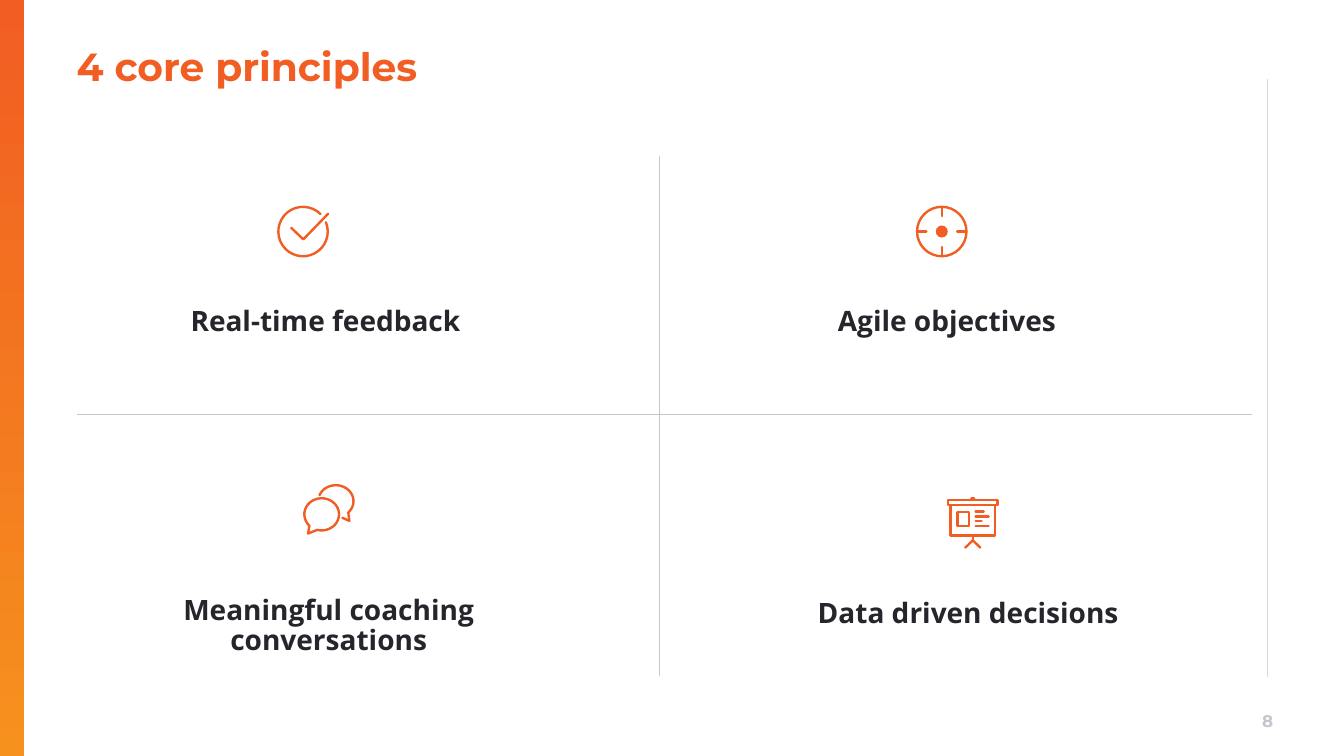
from math import cos, radians, sin

from lxml import etree
from pptx import Presentation
from pptx.dml.color import RGBColor
from pptx.enum.shapes import MSO_CONNECTOR, MSO_SHAPE
from pptx.enum.text import MSO_ANCHOR, PP_ALIGN
from pptx.oxml.ns import qn
from pptx.util import Pt

STRAIGHT = MSO_CONNECTOR.STRAIGHT
RECT, OVAL = MSO_SHAPE.RECTANGLE, MSO_SHAPE.OVAL
LEFT, CENTER = PP_ALIGN.LEFT, PP_ALIGN.CENTER
TOP, MIDDLE = MSO_ANCHOR.TOP, MSO_ANCHOR.MIDDLE

ORANGE, AMBER, INK, GREY, PALE = "F15D22", "F6911E", "25252C", "C5C5CE", "D9D9D9"
ICON_STROKE = 1.7


def arc(cx, cy, rx, ry, start, end, steps=32):
    angles = [radians(start + (end - start) * i / steps) for i in range(steps + 1)]
    return [(cx + rx * cos(a), cy + ry * sin(a)) for a in angles]


def box(x1, y1, x2, y2):
    return [(x1, y1), (x2, y1), (x2, y2), (x1, y2), (x1, y1)]


CHECK = [
    arc(18.5, 18.5, 17.65, 17.65, -22, 315),
    [(10, 15.8), (18.7, 24.1), (36.4, 5.8)],
]
TARGET = [
    arc(18.5, 18.5, 17.65, 17.65, 0, 360),
    [(18.5, 1), (18.5, 7.5)],
    [(18.5, 29.5), (18.5, 36)],
    [(1, 18.5), (7.5, 18.5)],
    [(29.5, 18.5), (36, 18.5)],
]
FRONT_BUBBLE = arc(13.3, 21.6, 12.4, 11.5, 135, 465) + [(3.6, 35.3)]
CHAT = [
    FRONT_BUBBLE + FRONT_BUBBLE[:1],
    arc(23.4, 12.2, 12.6, 11.4, 202, 405) + [(33.1, 26.3), (28.1, 24.1)],
]
BOARD = [
    box(0.9, 2.2, 36.4, 5.8),
    box(2.9, 5.8, 34.6, 27.4),
    box(7.9, 10.8, 16.2, 20.9),
    [(17.7, 1), (19.7, 1)],
    [(18.7, 27.4), (18.7, 31)],
    [(13.3, 36.2), (18.7, 31), (24.1, 36.2)],
] + [[(20.7, y), (x, y)] for x, y in [(26.5, 10.4), (30, 14), (25, 17.3), (30, 20.9)]]

TITLE = "4 core principles"
PAGE = "8"
PRINCIPLES = [
    ("Real-time feedback ", (121.4, 219.6, 227.5, 25.2), CHECK, (198, 146.9)),
    ("Agile objectives", (585.7, 219.6, 181.4, 25.2), TARGET, (654.2, 146.9)),
    ("Meaningful coaching conversations", (114.2, 425.9, 241.2, 54), CHAT, (216.5, 345.8)),
    ("Data driven decisions", (571, 428.4, 241.2, 25.2), BOARD, (676.2, 355)),
]
RULES = [
    ((905, 56.6), (905, 483.4), PALE, 0.5),
    ((54.7, 296.3), (894.2, 296.3), GREY, 1),
    ((471.2, 482.8), (471.2, 111.6), GREY, 1),
]
DOT_OFFSET, DOT_SIZE = 14.2, 8.6

prs = Presentation()
prs.slide_width, prs.slide_height = Pt(960), Pt(540)
s = prs.slides.add_slide(prs.slide_layouts[6])


def rgb(value):
    return RGBColor.from_string(value)


def add_line(start, end, color, width):
    line = s.shapes.add_connector(STRAIGHT, *[Pt(v) for v in (*start, *end)])
    line.line.color.rgb = rgb(color)
    line.line.width = Pt(width)
    etree.SubElement(line._element.spPr, qn("a:effectLst"))


def add_icon(strokes, origin):
    builder = None
    for stroke in strokes:
        start, *rest = [(Pt(origin[0] + x), Pt(origin[1] + y)) for x, y in stroke]
        if builder is None:
            builder = s.shapes.build_freeform(*start)
        else:
            builder.move_to(*start)
        builder.add_line_segments(rest, close=False)
    icon = builder.convert_to_shape()
    icon.shadow.inherit = False
    icon.fill.background()
    icon.line.color.rgb = rgb(ORANGE)
    icon.line.width = Pt(ICON_STROKE)
    icon._element.spPr.find(qn("a:ln")).set("cap", "rnd")


def add_text(text, place, font, size, color, align=LEFT, anchor=TOP, spacing=0.9):
    tf = s.shapes.add_textbox(*[Pt(v) for v in place]).text_frame
    tf.word_wrap = True
    tf.vertical_anchor = anchor
    tf.margin_left = tf.margin_right = tf.margin_top = tf.margin_bottom = 0
    p = tf.paragraphs[0]
    p.text = text
    p.alignment = align
    p.line_spacing = spacing
    p.font.name, p.font.size, p.font.bold = font, Pt(size), True
    p.font.color.rgb = rgb(color)


band = s.shapes.add_shape(RECT, 0, 0, Pt(17.3), prs.slide_height)
band.shadow.inherit = False
band.line.fill.background()
band.fill.gradient()
band.fill.gradient_angle = 270
for stop, color in zip(band.fill.gradient_stops, (ORANGE, AMBER)):
    stop.color.rgb = rgb(color)

for rule in RULES:
    add_line(*rule)

add_text(PAGE, (889.9, 500.4, 31, 28.8), "Montserrat", 12, GREY, CENTER, MIDDLE, 1)
add_text(TITLE, (54.7, 33.8, 835.2, 54), "Montserrat", 28, ORANGE)

for label, place, strokes, origin in PRINCIPLES:
    add_text(label, place, "Open Sans", 20, INK, CENTER)
    add_icon(strokes, origin)
    if strokes is TARGET:
        dot_at = [Pt(v + DOT_OFFSET) for v in origin]
        dot = s.shapes.add_shape(OVAL, *dot_at, Pt(DOT_SIZE), Pt(DOT_SIZE))
        dot.shadow.inherit = False
        dot.fill.solid()
        dot.fill.fore_color.rgb = rgb(ORANGE)
        dot.line.fill.background()

prs.save("out.pptx")
